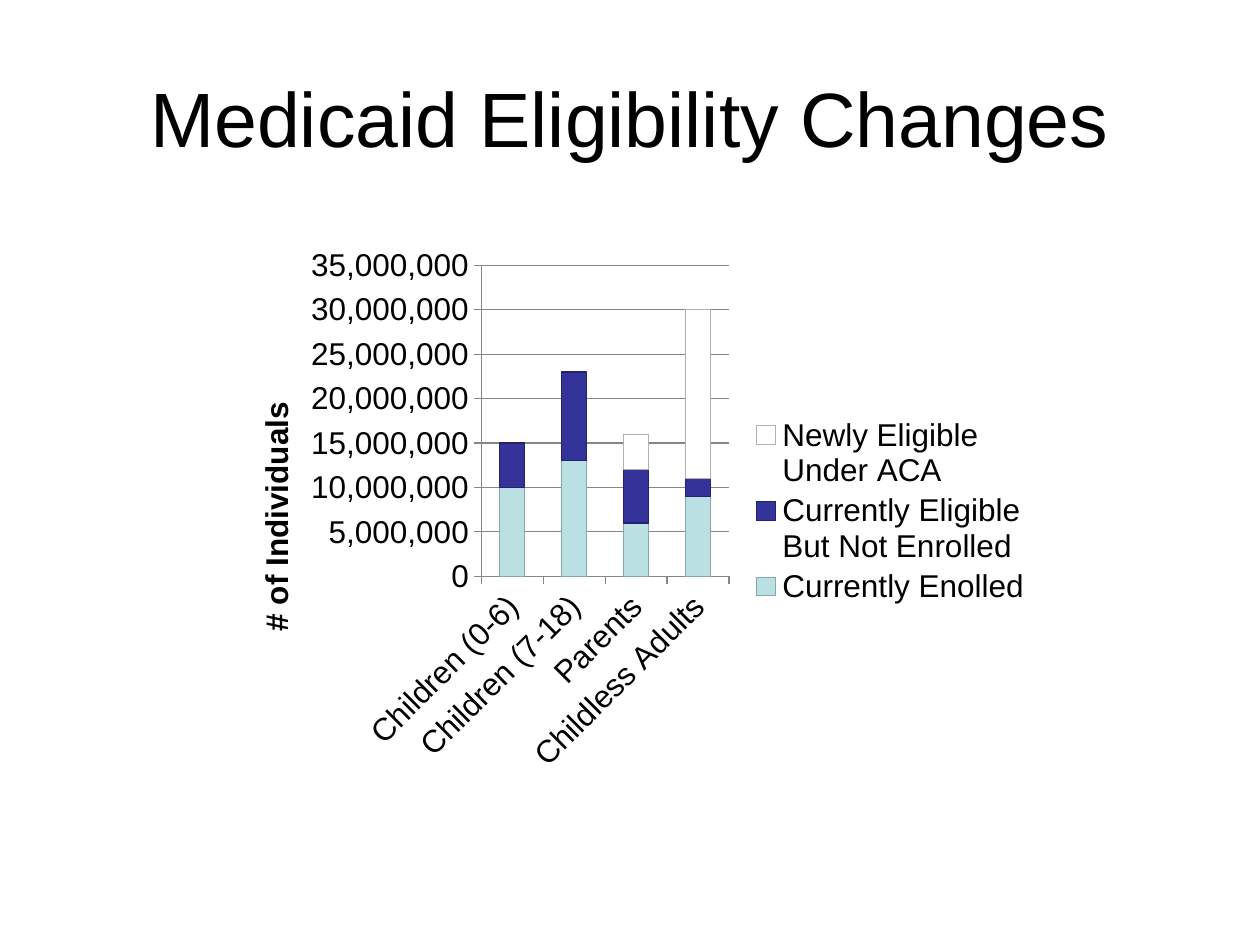
from dataclasses import dataclass

from lxml import etree
from pptx import Presentation
from pptx import util as u
from pptx.chart import data as chart_data
from pptx.dml import color
from pptx.enum import chart as chart_enum, text
from pptx.oxml import ns


@dataclass(frozen=True)
class Theme:
    font: str = "Arial"
    title_size: int = 44
    chart_size: int = 18
    ink: str = "000000"
    grid: str = "868686"
    enrolled: tuple = ("BBE0E3", "8AA6A8")
    eligible: tuple = ("333399", "222270")
    newly: tuple = ("FFFFFF", "B0B0B0")


theme = Theme()


def format_font(font, size, bold=False):
    font.name = theme.font
    font.size = u.Pt(size)
    font.bold = bold
    font.color.rgb = color.RGBColor.from_string(theme.ink)


def place_part(element, before, **fractions):
    """Position a chart part, with its layout following the child named before."""
    for old in element.findall(ns.qn("c:layout")):
        element.remove(old)
    layout = etree.Element(ns.qn("c:layout"))
    manual = etree.SubElement(layout, ns.qn("c:manualLayout"))
    if before is None:
        etree.SubElement(manual, ns.qn("c:layoutTarget")).set("val", "inner")
        element.insert(0, layout)
    else:
        element.find(ns.qn(before)).addnext(layout)
    for mode in ("xMode", "yMode"):
        etree.SubElement(manual, ns.qn("c:" + mode)).set("val", "edge")
    for name, value in fractions.items():
        etree.SubElement(manual, ns.qn("c:" + name)).set("val", str(value))


presentation = Presentation()
presentation.slide_width = u.Cm(25.4)
presentation.slide_height = u.Cm(19.05)
slide = presentation.slides.add_slide(presentation.slide_layouts[5])

# Title
title = slide.shapes.title
title.left, title.top = u.Cm(1.27), u.Cm(0.76)
title.width, title.height = u.Cm(22.86), u.Cm(3.18)
title.text_frame.text = "Medicaid Eligibility Changes"
title.text_frame.vertical_anchor = text.MSO_ANCHOR.MIDDLE
paragraph = title.text_frame.paragraphs[0]
paragraph.alignment = text.PP_ALIGN.CENTER
format_font(paragraph.runs[0].font, theme.title_size)

# Stacked columns
series_rows = [
    ("Currently Enolled", (10, 13, 6, 9), theme.enrolled),
    ("Currently Eligible But Not Enrolled", (5, 10, 6, 2), theme.eligible),
    ("Newly Eligible Under ACA", (0, 0, 4, 19), theme.newly),
]
eligibility = chart_data.CategoryChartData(number_format="#,##0")
eligibility.categories = ["Children (0-6)", "Children (7-18)", "Parents", "Childless Adults"]
for name, millions, colors in series_rows:
    eligibility.add_series(name, [value * 1_000_000 for value in millions])
chart = slide.shapes.add_chart(
    chart_enum.XL_CHART_TYPE.COLUMN_STACKED,
    u.Cm(4.37), u.Cm(4.8), u.Cm(16.66), u.Cm(11), eligibility,
).chart
chart.has_title = False
format_font(chart.font, theme.chart_size)

plot = chart.plots[0]
plot.gap_width = 150
plot.overlap = 100
plot.vary_by_categories = False
for series, (name, millions, (fill, outline)) in zip(plot.series, series_rows):
    series.invert_if_negative = False
    series.format.fill.solid()
    series.format.fill.fore_color.rgb = color.RGBColor.from_string(fill)
    series.format.line.color.rgb = color.RGBColor.from_string(outline)
    series.format.line.width = u.Pt(0.75)

# Axes
category_axis, value_axis = chart.category_axis, chart.value_axis
value_axis.minimum_scale = 0
value_axis.maximum_scale = 35_000_000
value_axis.major_unit = 5_000_000
value_axis.has_major_gridlines = True
value_axis.tick_labels.number_format = "#,##0"
value_axis.tick_labels.number_format_is_linked = False
for axis in (category_axis, value_axis):
    axis.major_tick_mark = chart_enum.XL_TICK_MARK.OUTSIDE
    format_font(axis.tick_labels.font, theme.chart_size)
for part in (category_axis, value_axis, value_axis.major_gridlines):
    part.format.line.color.rgb = color.RGBColor.from_string(theme.grid)
    part.format.line.width = u.Pt(0.75)

# Category labels slant upwards by 45 degrees
label_body = category_axis._element.find(ns.qn("c:txPr")).find(ns.qn("a:bodyPr"))
label_body.set("rot", str(-45 * 60000))
label_body.set("vert", "horz")

# Value axis title
axis_title = value_axis.axis_title
axis_title.text_frame.text = "# of Individuals"
format_font(axis_title.text_frame.paragraphs[0].runs[0].font, theme.chart_size, bold=True)
title_body = axis_title._element.find(".//" + ns.qn("a:bodyPr"))
title_body.set("rot", str(-90 * 60000))
title_body.set("vert", "horz")

# Legend
chart.has_legend = True
chart.legend.position = chart_enum.XL_LEGEND_POSITION.RIGHT
chart.legend.include_in_layout = False
format_font(chart.legend.font, theme.chart_size)

# Layout inside the chart, as fractions of its size
plot_area = chart._chartSpace.find(".//" + ns.qn("c:plotArea"))
place_part(plot_area, None, x=0.32, y=0.05, w=0.3, h=0.57)
place_part(axis_title._element, "c:tx", x=0.04, y=0.29)
place_part(chart.legend._element, "c:legendPos", x=0.64, y=0.32, w=0.35, h=0.36)

presentation.save("out.pptx")
